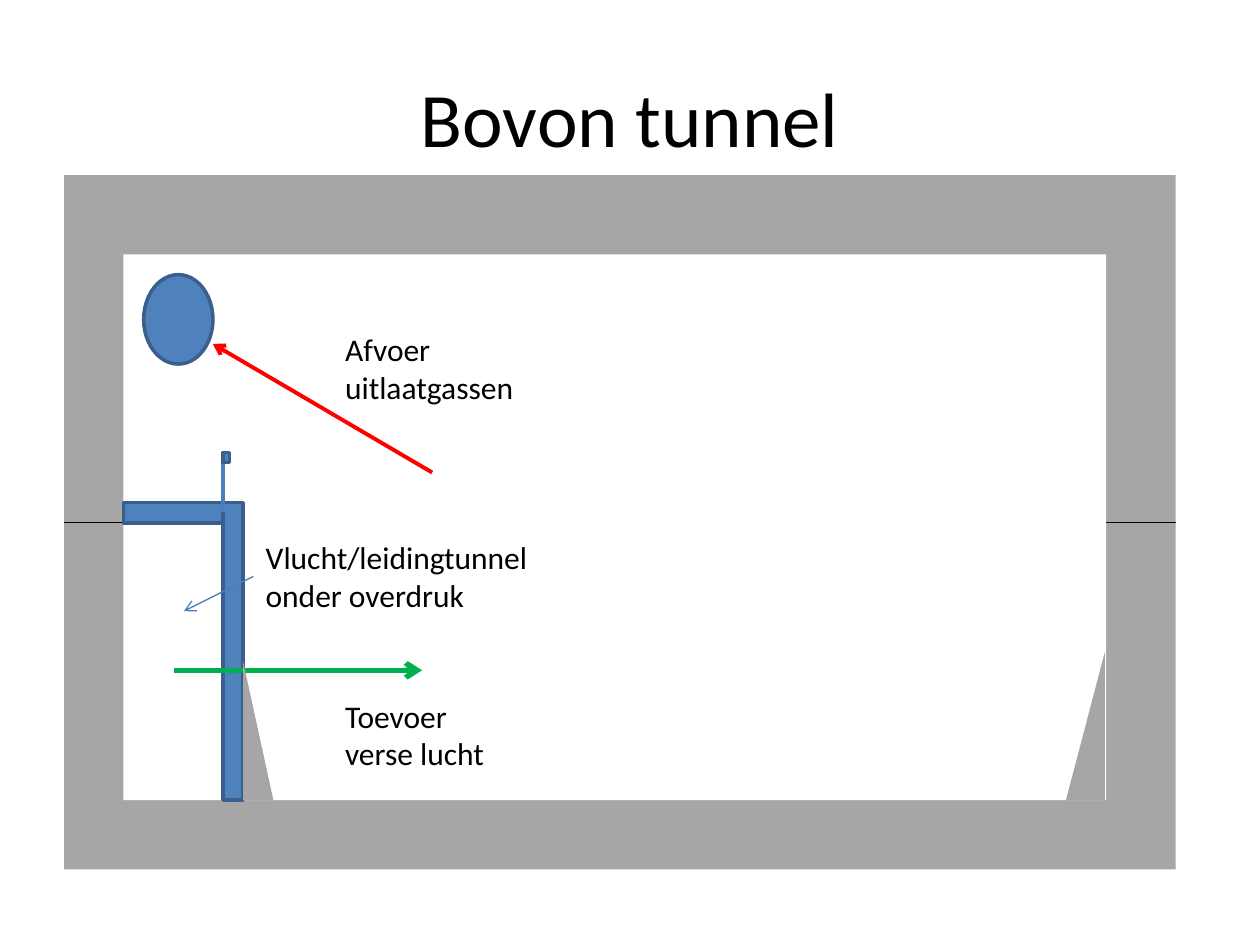
from lxml import etree
from pptx import Presentation
from pptx.dml.color import RGBColor
from pptx.enum.shapes import MSO_CONNECTOR, MSO_SHAPE
from pptx.enum.text import MSO_ANCHOR, MSO_AUTO_SIZE, PP_ALIGN
from pptx.oxml.ns import qn
from pptx.util import Inches, Pt

RECTANGLE = MSO_SHAPE.RECTANGLE
ELLIPSE = MSO_SHAPE.OVAL
TRIANGLE = MSO_SHAPE.ISOSCELES_TRIANGLE
STRAIGHT = MSO_CONNECTOR.STRAIGHT
MIDDLE = MSO_ANCHOR.MIDDLE
FIT_SHAPE = MSO_AUTO_SIZE.SHAPE_TO_FIT_TEXT
LEFT, CENTER = PP_ALIGN.LEFT, PP_ALIGN.CENTER
LEFT_SIDE, RIGHT_SIDE = 1, 3

COLORS = {
    "text": "000000",
    "concrete": "A6A6A6",
    "space": "FFFFFF",
    "installation": "4F81BD",
    "outline": "3A5F8C",
    "thin": "4B7EBC",
    "fresh": "00B050",
    "exhaust": "FF0000",
}


class TunnelSlide:
    def __init__(self, slide, font="Calibri"):
        self.slide = slide
        self.font = font

    def color(self, name):
        return RGBColor.from_string(COLORS[name])

    def shape(self, kind, box, fill, outline=None):
        shape = self.slide.shapes.add_shape(kind, *map(Inches, box))
        shape.shadow.inherit = False
        shape.fill.solid()
        shape.fill.fore_color.rgb = self.color(fill)
        if outline:
            shape.line.color.rgb = self.color(outline)
            shape.line.width = Pt(2)
        else:
            shape.line.fill.background()
        return shape

    def installation(self, kind, box):
        return self.shape(kind, box, "installation", "outline")

    def kerb(self, box, apex):
        """Add a sloping kerb; apex is the tip's place along its width, 0 to 1."""
        self.shape(TRIANGLE, box, "concrete").adjustments[0] = apex

    def line(self, start, end, color, width, arrow=False):
        line = self.slide.shapes.add_connector(STRAIGHT, *map(Inches, start + end))
        line.line.color.rgb = self.color(color)
        line.line.width = Pt(width)
        if arrow:
            etree.SubElement(line.line._get_or_add_ln(), qn("a:tailEnd"), type="arrow")
        etree.SubElement(line._element.spPr, qn("a:effectLst"))
        return line

    def text(self, wording, box, size=18, align=LEFT):
        label = self.slide.shapes.add_textbox(*map(Inches, box))
        frame = label.text_frame
        frame.word_wrap = True
        frame.text = wording
        paragraph = frame.paragraphs[0]
        paragraph.alignment = align
        font = paragraph.runs[0].font
        font.name, font.size = self.font, Pt(size)
        font.color.rgb = self.color("text")
        return label

    def title(self, wording, box):
        self.text(wording, box, 44, CENTER).text_frame.vertical_anchor = MIDDLE

    def label(self, wording, box):
        label = self.text(wording, box)
        label.text_frame.auto_size = FIT_SHAPE
        return label


def main():
    presentation = Presentation()
    presentation.slide_width, presentation.slide_height = Inches(10), Inches(7.5)
    tunnel = TunnelSlide(presentation.slides.add_slide(presentation.slide_layouts[6]))

    tunnel.title("Bovon tunnel", (0.5, 0.3, 9, 1.25))

    # Tunnel cross-section
    walls = tunnel.shape(RECTANGLE, (0.51, 1.39, 8.82, 5.51), "concrete")
    joint = tunnel.line((0.51, 4.14), (9.33, 4.14), "text", 0.75)
    joint.begin_connect(walls, LEFT_SIDE)
    joint.end_connect(walls, RIGHT_SIDE)
    tunnel.shape(RECTANGLE, (0.98, 2.02, 7.8, 4.33), "space")

    # Escape passage, exhaust duct and railing
    tunnel.installation(RECTANGLE, (1.77, 3.99, 0.16, 2.36))
    tunnel.installation(RECTANGLE, (0.98, 3.99, 0.79, 0.16))
    tunnel.installation(ELLIPSE, (1.14, 2.18, 0.55, 0.71))
    tunnel.line((1.77, 3.67), (1.77, 4.06), "thin", 2.25)
    tunnel.installation(RECTANGLE, (1.77, 3.59, 0.05, 0.08))

    # Air flows
    tunnel.line((1.38, 5.32), (3.35, 5.32), "fresh", 3, arrow=True)
    tunnel.line((3.43, 3.75), (1.69, 2.73), "exhaust", 2.25, arrow=True)

    tunnel.kerb((1.93, 5.25, 0.24, 1.1), apex=0)
    tunnel.kerb((8.46, 5.17, 0.31, 1.18), apex=1)

    passage = tunnel.label("Vlucht/leidingtunnel onder overdruk", (2.01, 4.22, 2.52, 0.71))
    pointer = tunnel.line((2.01, 4.58), (1.46, 4.85), "thin", 0.75, arrow=True)
    pointer.begin_connect(passage, LEFT_SIDE)
    tunnel.label("Afvoer uitlaatgassen", (2.64, 2.57, 1.81, 0.71))
    tunnel.label("Toevoer verse lucht", (2.64, 5.48, 1.57, 0.71))

    presentation.save("out.pptx")


if __name__ == "__main__":
    main()
